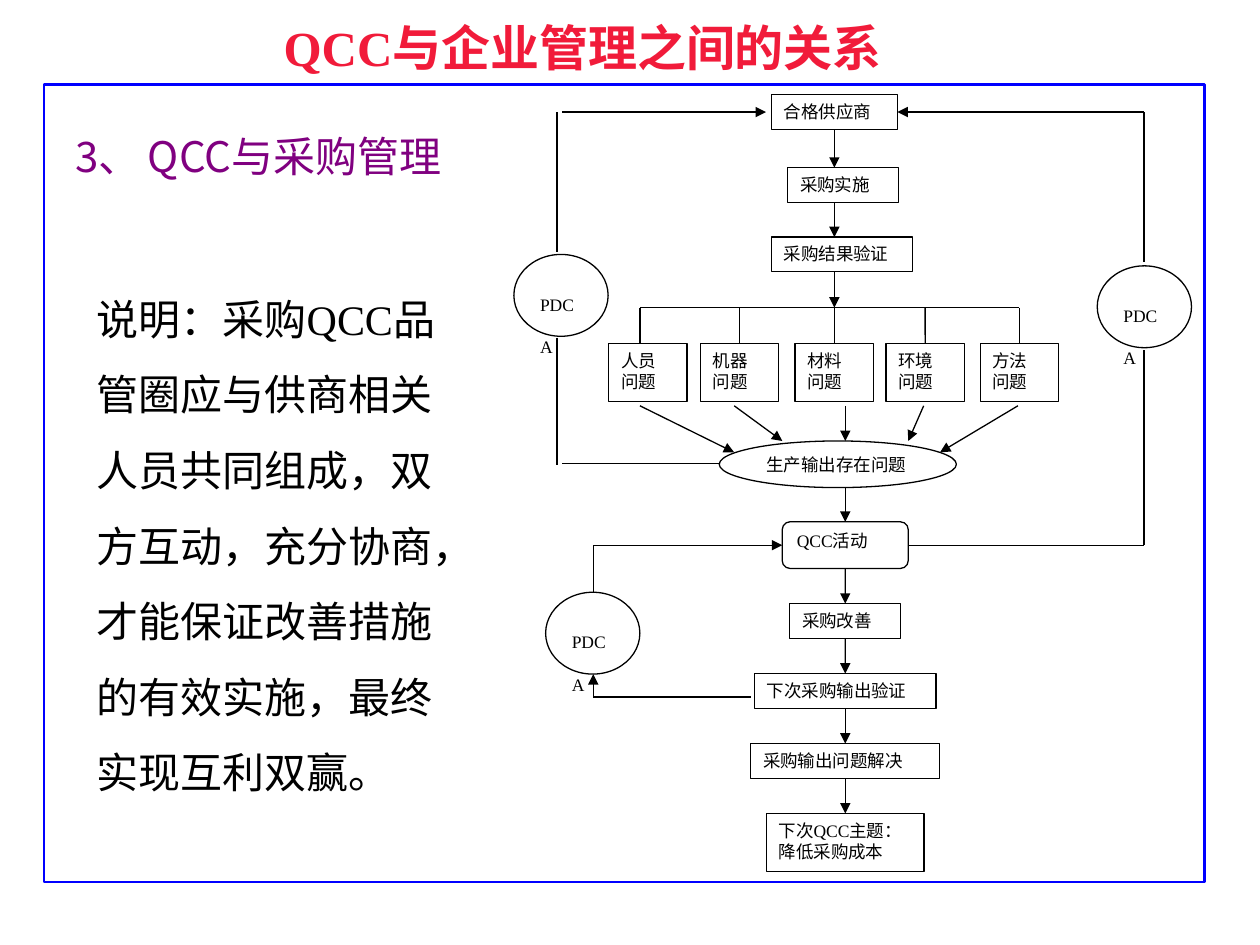
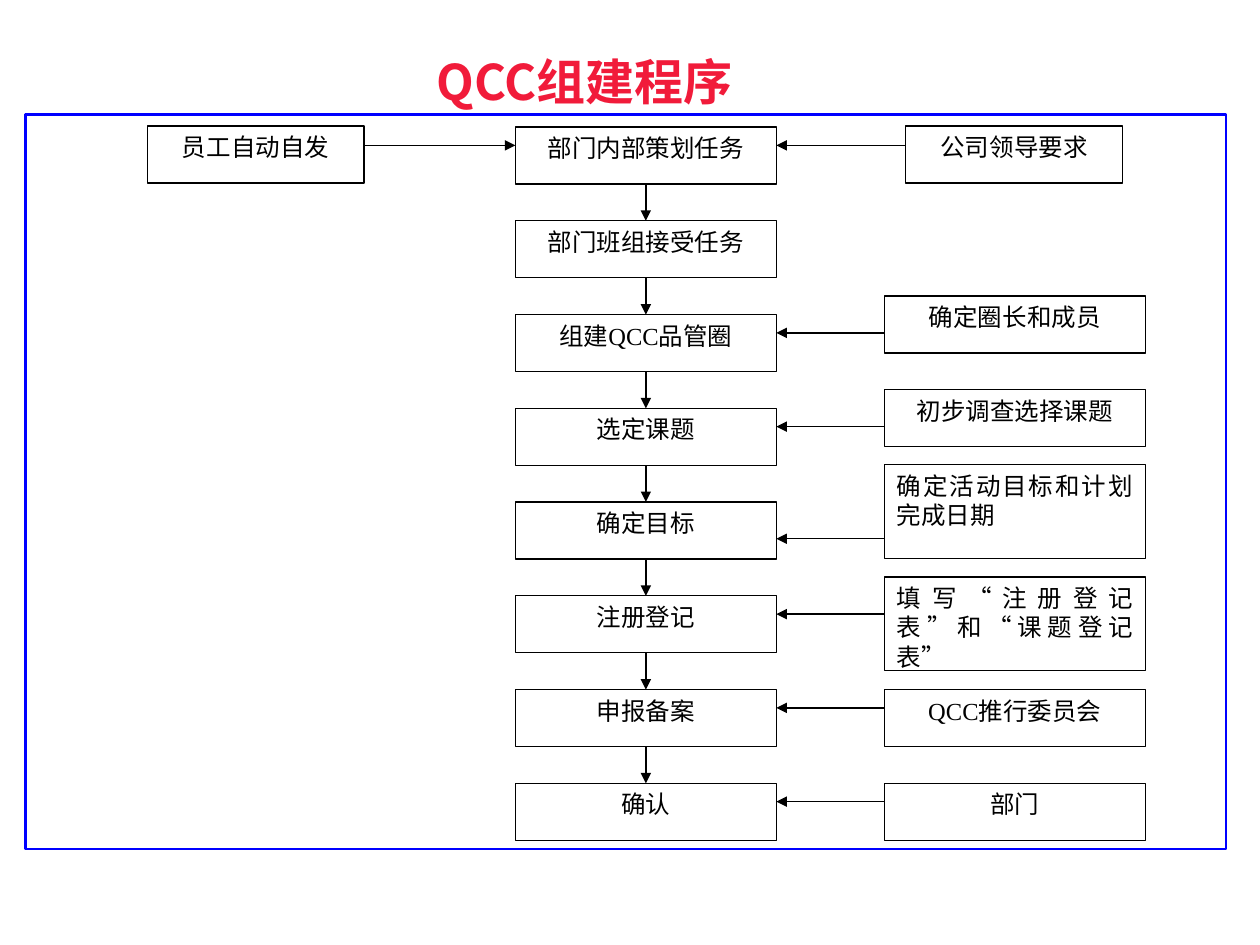
from collections import namedtuple
from dataclasses import dataclass
from itertools import pairwise

from lxml.etree import SubElement
from pptx import Presentation
from pptx.dml.color import RGBColor
from pptx.enum.shapes import MSO_CONNECTOR, MSO_SHAPE
from pptx.enum.text import MSO_ANCHOR, MSO_AUTO_SIZE, PP_ALIGN
from pptx.oxml.ns import qn
from pptx.util import Cm, Pt


@dataclass(frozen=True)
class Theme:
    title: RGBColor = RGBColor(0xF1, 0x1B, 0x3A)
    frame: RGBColor = RGBColor(0x00, 0x00, 0xFF)
    heading: RGBColor = RGBColor(0x80, 0x00, 0x80)
    ink: RGBColor = RGBColor(0x00, 0x00, 0x00)
    sans: str = "Noto Sans CJK SC"
    serif: str = "Times New Roman"
    plain: str = "Arial"
    title_size: int = 28
    body_size: int = 24
    gap_size: int = 18
    step_size: int = 14
    node_size: int = 10
    frame_width: float = 1.5
    line_width: float = 0.75


THEME = Theme()
TOP, LEFT, BOTTOM, RIGHT = range(4)
Port = namedtuple("Port", "shape side")


# Text
def add_span(para, text, size, font=THEME.serif, color=THEME.ink, bold=False):
    span = para.add_run()
    span.text = text
    span.font.size = Pt(size)
    span.font.name = font
    span.font.bold = bold
    span.font.color.rgb = color
    latin = span.font._element.find(qn("a:latin"))
    east_asian = latin.makeelement(qn("a:ea"), {"typeface": THEME.sans})
    latin.addnext(east_asian)


def add_text(slide, left, top, width, height):
    box = slide.shapes.add_textbox(Cm(left), Cm(top), Cm(width), Cm(height))
    box.text_frame.word_wrap = True
    return box.text_frame


def add_title(slide, left, top, width, spans):
    frame = add_text(slide, left, top, width, 1.02)
    frame.vertical_anchor = MSO_ANCHOR.MIDDLE
    para = frame.paragraphs[0]
    para.alignment = PP_ALIGN.CENTER
    for text, font in spans:
        add_span(para, text, THEME.title_size, font, THEME.title, True)


# Shapes
def add_outline(slide, left, top, width, height, kind=MSO_SHAPE.RECTANGLE,
                color=THEME.ink, weight=THEME.line_width):
    shape = slide.shapes.add_shape(kind, Cm(left), Cm(top), Cm(width), Cm(height))
    shape.shadow.inherit = False
    shape.fill.background()
    shape.line.color.rgb = color
    shape.line.width = Pt(weight)
    return shape


def add_frame(slide, left, top, width, height):
    add_outline(slide, left, top, width, height,
                color=THEME.frame, weight=THEME.frame_width)


def add_node(slide, lines, left, top, width, height, kind=MSO_SHAPE.RECTANGLE,
             size=THEME.node_size, align=PP_ALIGN.JUSTIFY, spacing=None):
    node = add_outline(slide, left, top, width, height, kind)
    frame = node.text_frame
    frame.word_wrap = True
    frame.vertical_anchor = MSO_ANCHOR.TOP
    for index, line in enumerate(lines.split("\n")):
        para = frame.add_paragraph() if index else frame.paragraphs[0]
        para.alignment = align
        para.line_spacing = spacing
        add_span(para, line, size)
    return node


# Connectors: each end is a point in cm or a Port on a shape
def add_line(slide, start, end, arrow=False):
    points = [(0, 0) if isinstance(spot, Port) else spot for spot in (start, end)]
    line = slide.shapes.add_connector(
        MSO_CONNECTOR.STRAIGHT, *(Cm(value) for point in points for value in point))
    if isinstance(start, Port):
        line.begin_connect(*start)
    if isinstance(end, Port):
        line.end_connect(*end)
    line.line.color.rgb = THEME.ink
    line.line.width = Pt(THEME.line_width)
    if arrow:
        SubElement(line.line._get_or_add_ln(), qn("a:tailEnd"), type="triangle")
    SubElement(line._element.spPr, qn("a:effectLst"))


def add_arrow(slide, start, end):
    add_line(slide, start, end, arrow=True)


def add_chain(slide, nodes):
    for upper, lower in pairwise(nodes):
        add_arrow(slide, Port(upper, BOTTOM), Port(lower, TOP))


# Slide 1: QCC and purchasing
def add_explanation(slide):
    heading = add_text(slide, 1.27, 2.51, 10.59, 1.27)
    para = heading.paragraphs[0]
    add_span(para, "3、", THEME.body_size, THEME.sans, THEME.heading)
    add_span(para, " ", THEME.gap_size, THEME.plain, bold=True)
    add_span(para, "QCC与采购管理", THEME.body_size, THEME.sans, THEME.heading)

    body = add_text(slide, 1.7, 5.28, 8.05, 10.82)
    para = body.paragraphs[0]
    para.line_spacing = 1.5
    add_span(para, "说明：采购", THEME.body_size, THEME.sans)
    add_span(para, "QCC", THEME.body_size)
    add_span(para, "品管圈应与供商相关人员共同组成，双方互动，充分协商，"
                   "才能保证改善措施的有效实施，最终实现互利双赢。",
             THEME.body_size, THEME.sans)
    for frame in (heading, body):
        frame.auto_size = MSO_AUTO_SIZE.SHAPE_TO_FIT_TEXT


def add_problem_fan(slide, trunk):
    fan_y, branch_top, branch_width, arrow_y = 6.2, 6.93, 1.58, 8.18
    # text, left, start x of arrow, arrow tip
    branches = [
        ("人员", 12.27, 12.9, (14.8, 9.12)),
        ("机器", 14.12, 14.8, (15.77, 8.89)),
        ("材料", 16.03, 17.04, (17.04, 8.89)),
        ("环境", 17.86, 18.62, (18.31, 8.89)),
        ("方法", 19.76, 20.52, (18.95, 9.12)),
    ]
    first_x, last_x = 12.9, 20.55
    add_line(slide, (first_x, fan_y), (last_x, fan_y))
    for index, (text, left, start_x, tip) in enumerate(branches):
        node = add_node(slide, text + "\n问题", left, branch_top, branch_width, 1.17)
        if index:
            add_line(slide, (left + branch_width / 2, fan_y), Port(node, TOP))
        else:
            add_line(slide, (first_x, fan_y), (first_x, branch_top))
        add_arrow(slide, (start_x, arrow_y), tip)
    add_arrow(slide, (trunk, 5.48), (trunk, fan_y))


def build_purchasing(slide):
    add_title(slide, 4.24, 0.43, 15.24,
              [("QCC", THEME.serif), ("与企业管理之间的关系 ", THEME.sans)])
    add_frame(slide, 0.89, 1.7, 23.39, 16.08)
    add_explanation(slide)

    # Purchasing steps down to the problem fan
    trunk, spine, node_height = 16.82, 17.04, 0.7
    supplier = add_node(slide, "合格供应商", 15.55, 1.91, 2.54, node_height)
    add_node(slide, "采购实施", 15.88, 3.38, 2.24, node_height)
    add_node(slide, "采购结果验证", 15.55, 4.78, 2.84, node_height)
    add_arrow(slide, Port(supplier, BOTTOM), (trunk, 3.38))
    add_arrow(slide, (trunk, 4.08), (trunk, 4.78))
    add_problem_fan(slide, trunk)
    add_node(slide, "生产输出存在问题", 14.5, 8.89, 4.78, 0.94, MSO_SHAPE.OVAL)

    # Improvement steps, centred on the spine
    activity = add_node(slide, "QCC活动", spine - 1.27, 10.52, 2.54, 0.94,
                        MSO_SHAPE.ROUNDED_RECTANGLE)
    chain = [activity]
    steps = [("采购改善", 2.24, node_height), ("下次采购输出验证", 3.66, node_height),
             ("采购输出问题解决", 3.81, node_height),
             ("下次QCC主题：\n降低采购成本", 3.18, 1.17)]
    for index, (text, width, height) in enumerate(steps):
        chain.append(add_node(slide, text, spine - width / 2, 12.17 + 1.41 * index,
                              width, height))
    add_arrow(slide, (spine, 9.83), Port(activity, TOP))
    add_chain(slide, chain)

    # PDCA loops
    for left, top in [(10.36, 5.13), (22.12, 5.36), (11, 11.94)]:
        add_node(slide, "PDCA", left, top, 1.9, 1.65, MSO_SHAPE.OVAL, spacing=2.0)

    rail_y, activity_y = 2.26, 10.99
    outer, inner, right = 11.23, 11.96, 23.06
    add_arrow(slide, (outer + 0.1, rail_y), (15.44, rail_y))
    add_line(slide, (outer, rail_y), (outer, 5.08))
    add_line(slide, (outer, 6.81), (outer, 9.37))
    add_line(slide, (outer + 0.1, 9.35), (14.5, 9.35))

    add_arrow(slide, (right, rail_y), Port(supplier, RIGHT))
    add_line(slide, (right, rail_y), (right, 5.28))
    add_line(slide, (right, 7.06), (right, activity_y))
    add_line(slide, Port(activity, RIGHT), (right, activity_y))

    add_arrow(slide, (inner, activity_y), Port(activity, LEFT))
    add_line(slide, (inner, activity_y), (inner, 11.94))
    add_line(slide, (inner, 14.05), (15.14, 14.05))
    add_arrow(slide, (inner, 14.05), (inner, 13.59))


# Slide 2: how a QCC is set up
def build_setup(slide):
    add_frame(slide, 0.51, 2.31, 24.21, 14.81)
    add_title(slide, 6.5, 1.12, 10.8, [("QCC组建程序 ", THEME.sans)])

    column, note_left, step_width, step_height = 10.39, 17.83, 5.26, 1.15
    column_right = column + step_width
    first_top, pitch, drop = 2.56, 1.89, 0.37

    def add_step(text, left, top, width=step_width, height=step_height,
                 align=PP_ALIGN.CENTER):
        return add_node(slide, text, left, top, width, height,
                        size=THEME.step_size, align=align)

    # Main column
    steps = ["部门内部策划任务", "部门班组接受任务", "组建QCC品管圈", "选定课题",
             "确定目标", "注册登记", "申报备案", "确认"]
    add_chain(slide, [add_step(text, column, first_top + pitch * row)
                      for row, text in enumerate(steps)])

    # The two triggers
    trigger_width, trigger_y = 4.37, first_top + drop
    add_step("员工自动自发", 2.97, 2.54, trigger_width)
    add_step("公司领导要求", 18.26, 2.54, trigger_width)
    add_arrow(slide, (2.97 + trigger_width, trigger_y), (column, trigger_y))
    add_arrow(slide, (18.26, trigger_y), (column_right, trigger_y))

    # Notes: text, top, height, alignment, row, arrow offset in the row
    tall = 1.89
    notes = [
        ("确定圈长和成员", 5.97, step_height, PP_ALIGN.CENTER, 2, drop),
        ("初步调查选择课题", 7.85, step_height, PP_ALIGN.CENTER, 3, drop),
        ("确定活动目标和计划完成日期", 9.37, tall, PP_ALIGN.JUSTIFY, 4, 2 * drop),
        ("填写“注册登记表”和“课题登记表”", 11.63, tall, PP_ALIGN.JUSTIFY, 5, drop),
        ("QCC推行委员会", 13.9, step_height, PP_ALIGN.CENTER, 6, drop),
        ("部门", 15.79, step_height, PP_ALIGN.CENTER, 7, drop),
    ]
    for text, top, height, align, row, offset in notes:
        add_step(text, note_left, top, height=height, align=align)
        arrow_y = first_top + pitch * row + offset
        add_arrow(slide, (note_left, arrow_y), (column_right, arrow_y))


def main():
    deck = Presentation()
    deck.slide_width, deck.slide_height = Cm(25.4), Cm(19.05)
    for build in (build_purchasing, build_setup):
        build(deck.slides.add_slide(deck.slide_layouts[6]))
    deck.save("out.pptx")


if __name__ == "__main__":
    main()
